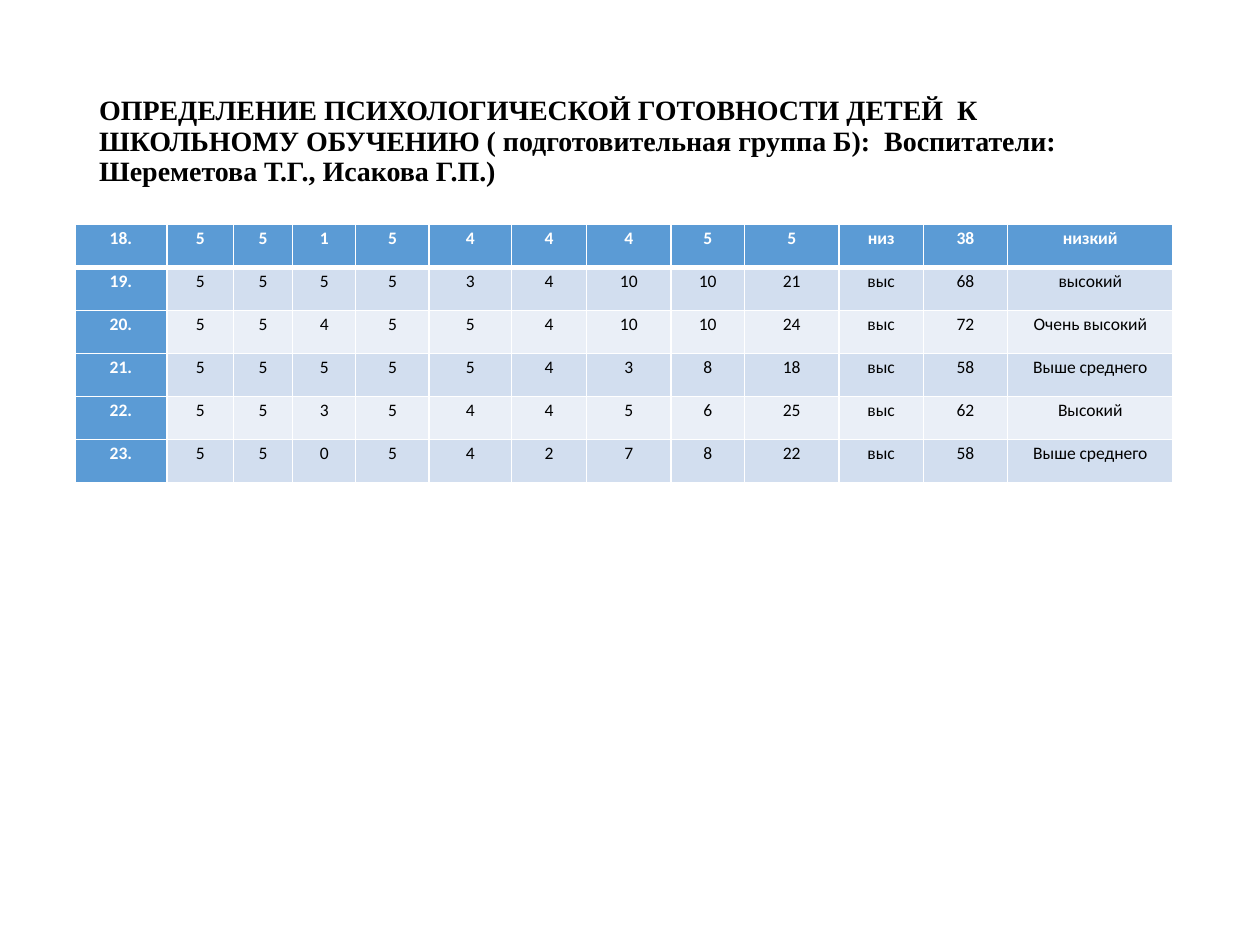
from dataclasses import dataclass

from lxml.etree import SubElement
from pptx import Presentation
from pptx.dml.color import RGBColor
from pptx.enum.text import MSO_ANCHOR, PP_ALIGN
from pptx.oxml.ns import qn
from pptx.table import _Cell
from pptx.util import Pt

BLUE, PALE, LIGHT = "5B9BD5", "D2DEEF", "EAEFF7"
WHITE, BLACK = "FFFFFF", "000000"

TITLE = (
    "ОПРЕДЕЛЕНИЕ ПСИХОЛОГИЧЕСКОЙ ГОТОВНОСТИ ДЕТЕЙ  К ШКОЛЬНОМУ ОБУЧЕНИЮ "
    "( подготовительная группа Б):  Воспитатели: Шереметова Т.Г., Исакова Г.П.)"
)
COLUMN_WIDTHS = [52.5, 38.2, 33.8, 36, 42, 47, 43, 48.2, 42, 54, 48.2, 48.2, 94.5]
ROW_HEIGHT = 24.55


@dataclass
class Child:
    number: str
    scores: list[int]
    motivation: str
    total: int
    level: str

    def values(self) -> list[str]:
        return [self.number, *map(str, self.scores), self.motivation, str(self.total), self.level]


@dataclass
class CellStyle:
    fill: str
    text: str
    bold: bool
    top: float
    bottom: float


CHILDREN = [
    Child("18.", [5, 5, 1, 5, 4, 4, 4, 5, 5], "низ", 38, "низкий"),
    Child("19.", [5, 5, 5, 5, 3, 4, 10, 10, 21], "выс", 68, "высокий"),
    Child("20.", [5, 5, 4, 5, 5, 4, 10, 10, 24], "выс", 72, "Очень высокий"),
    Child("21.", [5, 5, 5, 5, 5, 4, 3, 8, 18], "выс", 58, "Выше среднего"),
    Child("22.", [5, 5, 3, 5, 4, 4, 5, 6, 25], "выс", 62, "Высокий"),
    Child("23.", [5, 5, 0, 5, 4, 2, 7, 8, 22], "выс", 58, "Выше среднего"),
]


def color(value: str) -> RGBColor:
    return RGBColor.from_string(value)


def add_borders(cell: _Cell, top: float, bottom: float) -> None:
    """Add white borders; they must come before the cell's fill."""
    properties = cell._tc.get_or_add_tcPr()
    for side, width in (("L", 1), ("R", 1), ("T", top), ("B", bottom)):
        line = SubElement(properties, qn(f"a:ln{side}"), w=str(Pt(width)))
        fill = SubElement(line, qn("a:solidFill"))
        SubElement(fill, qn("a:srgbClr"), val=WHITE)


def style_for(row: int, column: int) -> CellStyle:
    heading = row == 0 or column == 0
    band = PALE if row % 2 else LIGHT
    return CellStyle(
        fill=BLUE if heading else band,
        text=WHITE if heading else BLACK,
        bold=heading,
        top=3 if row == 1 else 1,
        bottom=3 if row == 0 else 1,
    )


def fill_cell(cell: _Cell, text: str, style: CellStyle) -> None:
    add_borders(cell, style.top, style.bottom)
    cell.fill.solid()
    cell.fill.fore_color.rgb = color(style.fill)
    cell.margin_left = cell.margin_right = Pt(4.3)
    cell.margin_top = cell.margin_bottom = 0
    cell.text = text
    paragraph = cell.text_frame.paragraphs[0]
    paragraph.alignment = PP_ALIGN.CENTER
    paragraph.line_spacing = 1.15
    paragraph.font.name = "Calibri"
    paragraph.font.size = Pt(10)
    paragraph.font.bold = style.bold
    paragraph.font.color.rgb = color(style.text)


def add_title(slide) -> None:
    title = slide.shapes.title
    title.left, title.top, title.width, title.height = Pt(49.5), Pt(29), Pt(621), Pt(104.4)
    frame = title.text_frame
    frame.text = TITLE
    frame.word_wrap = True
    frame.vertical_anchor = MSO_ANCHOR.MIDDLE
    paragraph = frame.paragraphs[0]
    paragraph.alignment = PP_ALIGN.LEFT
    paragraph.line_spacing = 0.9
    paragraph.font.name = "Times New Roman"
    paragraph.font.size = Pt(16)
    paragraph.font.bold = True
    paragraph.font.color.rgb = color(BLACK)


def add_results_table(slide) -> None:
    table = slide.shapes.add_table(
        len(CHILDREN), len(COLUMN_WIDTHS), Pt(42.8), Pt(128.3),
        Pt(sum(COLUMN_WIDTHS)), Pt(ROW_HEIGHT * len(CHILDREN)),
    ).table
    table.first_col = True
    for column, width in zip(table.columns, COLUMN_WIDTHS):
        column.width = Pt(width)
    for row, child in enumerate(CHILDREN):
        table.rows[row].height = Pt(ROW_HEIGHT)
        for column, text in enumerate(child.values()):
            fill_cell(table.cell(row, column), text, style_for(row, column))


def main() -> None:
    presentation = Presentation()
    presentation.slide_width, presentation.slide_height = Pt(720), Pt(540)
    # "Title Only" layout
    slide = presentation.slides.add_slide(presentation.slide_layouts[5])
    add_title(slide)
    add_results_table(slide)
    presentation.save("out.pptx")


if __name__ == "__main__":
    main()
